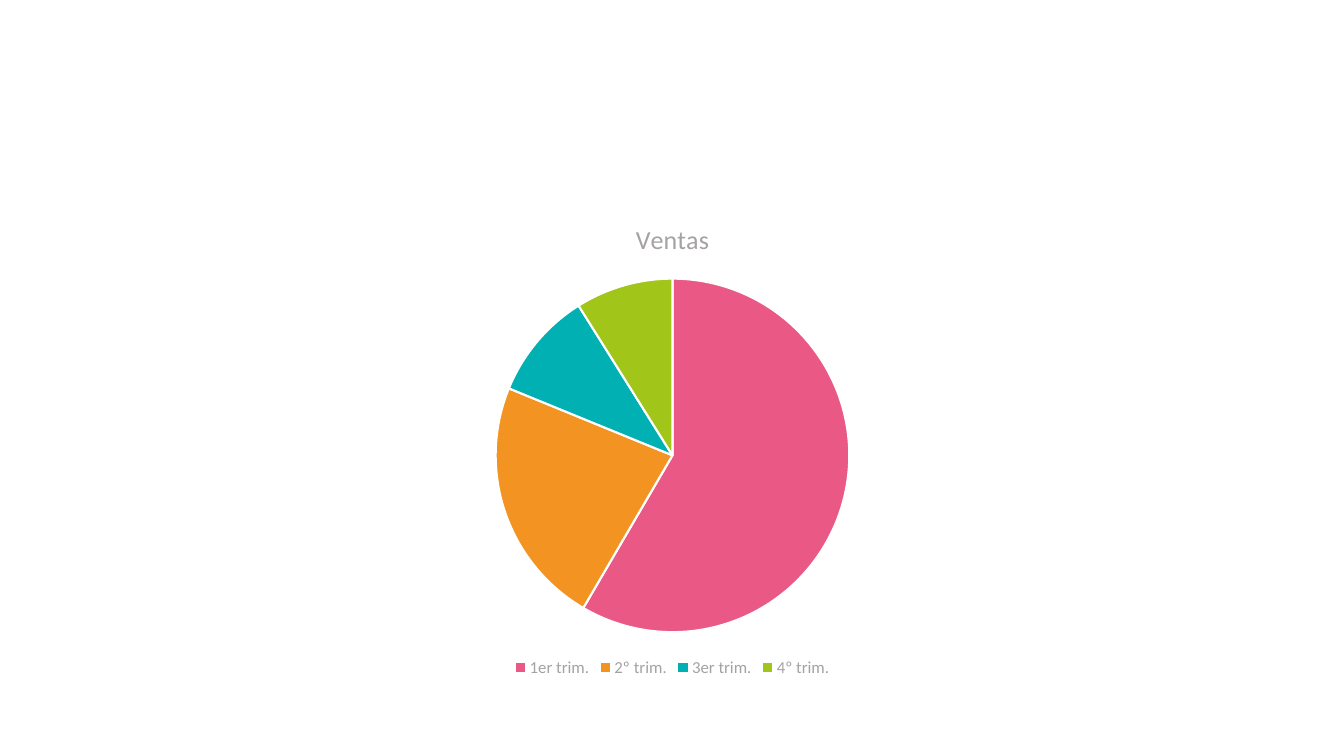
"""Build a slide with a pie chart of quarterly sales."""
from dataclasses import dataclass

from pptx import Presentation, util as u
from pptx.chart.data import CategoryChartData
from pptx.dml.color import RGBColor
from pptx.enum import chart as ch


@dataclass(frozen=True)
class Theme:
    font: str = "Calibri"
    text: str = "A6A2A2"
    base_text: str = "757070"
    edge: str = "FFFFFF"
    slices: tuple = ("EA5986", "F39422", "00B0B3", "A1C518")
    title_size: float = 18.6
    legend_size: float = 12
    base_size: float = 10
    edge_width: float = 1.5


class Deck:
    def __init__(self, theme):
        self.theme = theme
        self.prs = Presentation()
        self.prs.slide_width = u.Inches(13.33)
        self.prs.slide_height = u.Inches(7.5)
        self.s = self.prs.slides.add_slide(self.prs.slide_layouts[6])

    def style_font(self, font, size, color):
        font.name = self.theme.font
        font.size = u.Pt(size)
        font.bold = False
        font.color.rgb = RGBColor.from_string(color)

    def pie(self, title, values, left, top, width, height):
        t = self.theme
        data = CategoryChartData()
        data.categories = list(values)
        data.add_series(title, list(values.values()))
        chart = self.s.shapes.add_chart(
            ch.XL_CHART_TYPE.PIE, u.Inches(left), u.Inches(top),
            u.Inches(width), u.Inches(height), data).chart
        self.style_font(chart.font, t.base_size, t.base_text)

        chart.has_title = True
        tf = chart.chart_title.text_frame
        tf.text = title
        self.style_font(tf.paragraphs[0].runs[0].font, t.title_size, t.text)
        chart.chart_title.include_in_layout = False

        chart.has_legend = True
        chart.legend.position = ch.XL_LEGEND_POSITION.BOTTOM
        chart.legend.include_in_layout = False
        self.style_font(chart.legend.font, t.legend_size, t.text)

        plot = chart.plots[0]
        plot.vary_by_categories = True
        for i, color in enumerate(t.slices):
            fmt = plot.series[0].points[i].format
            fmt.fill.solid()
            fmt.fill.fore_color.rgb = RGBColor.from_string(color)
            fmt.line.color.rgb = RGBColor.from_string(t.edge)
            fmt.line.width = u.Pt(t.edge_width)


def main():
    deck = Deck(Theme())
    sales = {"1er trim.": 59, "2º trim.": 23, "3er trim.": 10, "4º trim.": 9}
    deck.pie("Ventas", sales, 0.92, 2, 11.5, 4.76)
    deck.prs.save("out.pptx")


if __name__ == "__main__":
    main()
